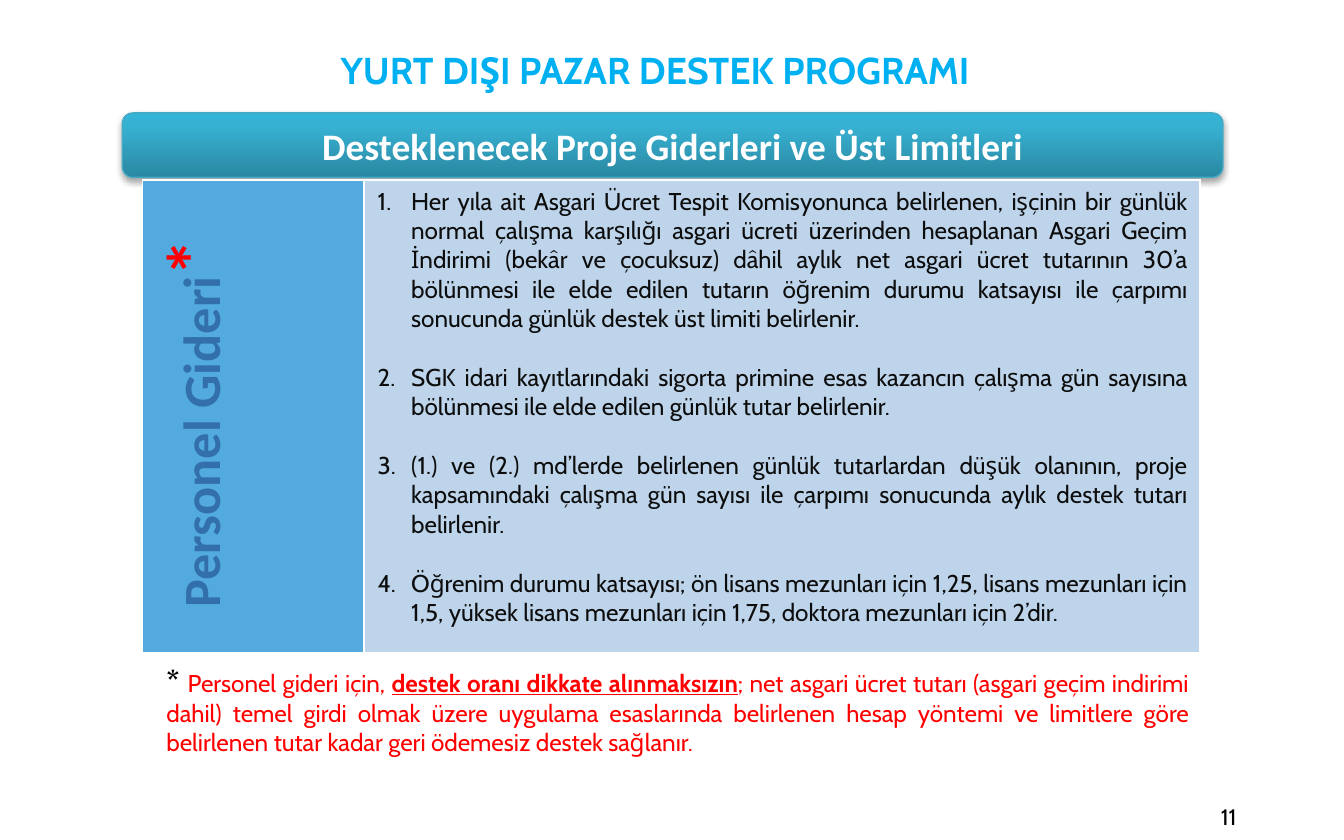
import lxml.etree
import pptx
import pptx.dml.color
import pptx.enum.shapes
import pptx.enum.text
import pptx.oxml.ns
import pptx.util

ALIGN = pptx.enum.text.PP_ALIGN
ANCHOR = pptx.enum.text.MSO_ANCHOR
W, H = pptx.util.Inches(10), pptx.util.Inches(6.25)
COLORS = {
    "title": "00B0F0", "white": "FFFFFF", "black": "000000", "red": "FF0000",
    "body": "0D0D0D", "label": "326FAB", "label_fill": "52AADF",
    "body_fill": "BDD4EB", "banner_line": "46AAC5",
    "banner_low": "2A88A2", "banner_mid": "37B1D2", "banner_top": "34B4D6",
}
RULES = [
    "Her yıla ait Asgari Ücret Tespit Komisyonunca belirlenen, işçinin bir günlük normal "
    "çalışma karşılığı asgari ücreti üzerinden hesaplanan Asgari Geçim İndirimi (bekâr ve "
    "çocuksuz) dâhil aylık net asgari ücret tutarının 30’a bölünmesi ile elde edilen tutarın "
    "öğrenim durumu katsayısı ile çarpımı sonucunda günlük destek üst limiti belirlenir.",
    "SGK idari kayıtlarındaki sigorta primine esas kazancın çalışma gün sayısına bölünmesi "
    "ile elde edilen günlük tutar belirlenir.",
    "(1.) ve (2.) md’lerde belirlenen günlük tutarlardan düşük olanının, proje kapsamındaki "
    "çalışma gün sayısı ile çarpımı sonucunda aylık destek tutarı belirlenir.",
    "Öğrenim durumu katsayısı; ön lisans mezunları için 1,25, lisans mezunları için 1,5, "
    "yüksek lisans mezunları için 1,75, doktora mezunları için 2’dir.",
]


def rgb(name):
    """Return the named colour."""
    return pptx.dml.color.RGBColor.from_string(COLORS[name])


def area(x, y, w, h):
    """Turn percentages of the slide into lengths."""
    return int(W * x / 100), int(H * y / 100), int(W * w / 100), int(H * h / 100)


def sub(parent, tag, **attrs):
    """Append a drawing element with attributes."""
    el = lxml.etree.SubElement(parent, pptx.oxml.ns.qn("a:" + tag))
    for key, value in attrs.items():
        el.set(key, str(value))
    return el


def add_run(p, text, size, color, font="Cabin", bold=False, underline=False):
    """Add one formatted run."""
    r = p.add_run()
    r.text = text
    r.font.size = pptx.util.Pt(size)
    r.font.name = font
    r.font.bold = bold
    if underline:
        r.font.underline = True
    r.font.color.rgb = rgb(color)


def add_text(s, box, align, runs, wrap=True, anchor=ANCHOR.TOP):
    """Add a text box of one paragraph and return the paragraph."""
    tf = s.shapes.add_textbox(*area(*box)).text_frame
    tf.word_wrap = wrap
    tf.vertical_anchor = anchor
    p = tf.paragraphs[0]
    p.alignment = align
    for text, size, color, style in runs:
        add_run(p, text, size, color, **style)
    return p


def add_banner(s, box, text):
    """Add the rounded gradient heading with its soft shadow."""
    sp = s.shapes.add_shape(pptx.enum.shapes.MSO_SHAPE.ROUNDED_RECTANGLE, *area(*box))
    sp.shadow.inherit = False
    sp.fill.gradient()
    sp.fill.gradient_angle = 90
    stops = sp._element.spPr.find(".//" + pptx.oxml.ns.qn("a:gsLst"))
    for old in list(stops):
        stops.remove(old)
    for pos, name in ((0, "banner_low"), (80, "banner_mid"), (100, "banner_top")):
        sub(sub(stops, "gs", pos=pos * 1000), "srgbClr", val=COLORS[name])
    sp.line.color.rgb = rgb("banner_line")
    sp.line.width = pptx.util.Pt(0.75)
    effects = sp._element.spPr.find(pptx.oxml.ns.qn("a:effectLst"))
    shadow = sub(effects, "outerShdw", blurRad=40000, dist=23000, dir=5400000, rotWithShape=0)
    sub(sub(shadow, "srgbClr", val=COLORS["black"]), "alpha", val=35000)
    tf = sp.text_frame
    tf.word_wrap = True
    tf.vertical_anchor = ANCHOR.MIDDLE
    p = tf.paragraphs[0]
    p.alignment = ALIGN.CENTER
    add_run(p, text, 20, "white", "Calibri", True)


def style_cell(cell, fill):
    """Fill a cell and give it white borders."""
    tcPr = cell._tc.get_or_add_tcPr()
    for side, width in (("L", 1), ("R", 1), ("T", 1), ("B", 3)):
        ln = sub(tcPr, "ln" + side, w=pptx.util.Pt(width))
        sub(sub(ln, "solidFill"), "srgbClr", val=COLORS["white"])
    cell.fill.solid()
    cell.fill.fore_color.rgb = rgb(fill)


def add_numbered(tf, items):
    """Write justified, automatically numbered paragraphs."""
    indent = pptx.util.Inches(0.25)
    for i, text in enumerate(items):
        p = tf.add_paragraph() if i else tf.paragraphs[0]
        p.alignment = ALIGN.JUSTIFY
        if i:
            p.space_before = pptx.util.Pt(15.75)
        pPr = p._p.get_or_add_pPr()
        pPr.set("marL", str(indent))
        pPr.set("indent", str(-indent))
        sub(pPr, "buFont", typeface="+mj-lt")
        sub(pPr, "buAutoNum", type="arabicPeriod")
        add_run(p, text, 13, "body")


def add_expense_table(s, box, widths):
    """Add the table with the rotated label and the numbered rules."""
    table = s.shapes.add_table(1, 2, *area(*box)).table
    table.first_row = table.horz_banding = False
    for column, width in zip(table.columns, widths):
        column.width = int(W * width / 100)
    label, rules = table.cell(0, 0), table.cell(0, 1)
    style_cell(label, "label_fill")
    style_cell(rules, "body_fill")
    label.vertical_anchor = ANCHOR.MIDDLE
    label._tc.get_or_add_tcPr().set("vert", "vert270")
    p = label.text_frame.paragraphs[0]
    p.alignment = ALIGN.CENTER
    for text, size, color in (("Personel Gideri", 28, "label"), ("*", 40, "red"), (" ", 28, "label")):
        add_run(p, text, size, color, "Calibri", True)
    add_numbered(rules.text_frame, RULES)


def main():
    """Build the slide and save it."""
    prs = pptx.Presentation()
    prs.slide_width, prs.slide_height = W, H
    s = prs.slides.add_slide(prs.slide_layouts[6])
    bold = {"bold": True}
    add_text(s, (69.7, 94.56, 23.3, 5.28), ALIGN.RIGHT,
             [("11", 12, "black", {})], anchor=ANCHOR.MIDDLE)
    add_banner(s, (9.1, 13.44, 81.9, 7.68), "Desteklenecek Proje Giderleri ve Üst Limitleri")
    p = add_text(s, (22.8, 2.08, 51.9, 8.64), ALIGN.CENTER,
                 [("YURT DIŞI PAZAR DESTEK PROGRAMI", 20, "title", bold)], wrap=False)
    p.line_spacing = pptx.util.Pt(36.4)
    add_expense_table(s, (10.6, 21.44, 78.7, 56.48), (16.5, 62.2))
    add_text(s, (11.4, 78.08, 78, 12.96), ALIGN.JUSTIFY, [
        ("* ", 16, "black", bold),
        ("Personel gideri için, ", 13, "red", {}),
        ("destek oranı dikkate alınmaksızın", 13, "red", {"bold": True, "underline": True}),
        ("; net asgari ücret tutarı (asgari geçim indirimi dahil) temel girdi olmak üzere "
         "uygulama esaslarında belirlenen hesap yöntemi ve limitlere göre belirlenen tutar "
         "kadar geri ödemesiz destek sağlanır.", 13, "red", {}),
    ])
    prs.save("out.pptx")


if __name__ == "__main__":
    main()
